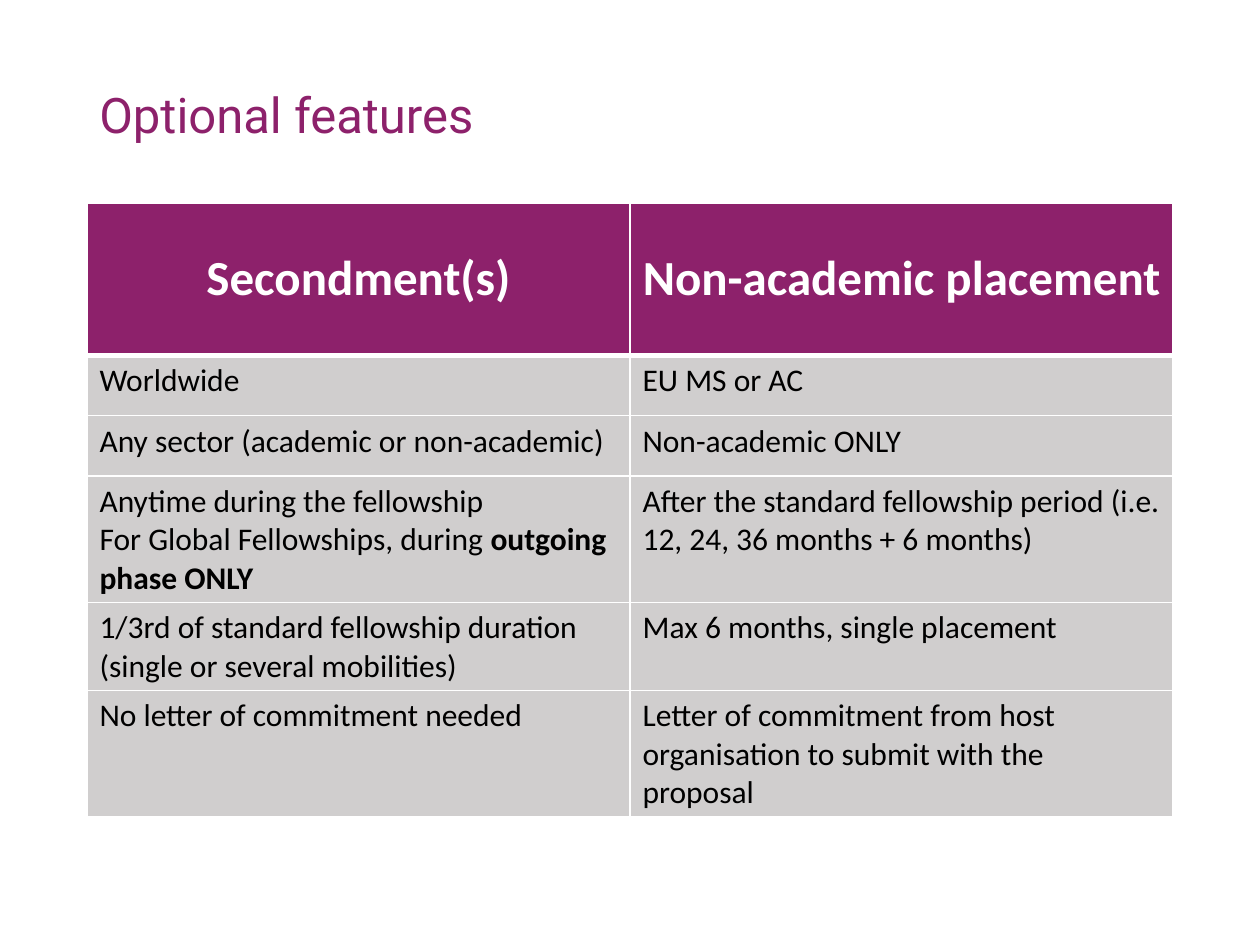
from lxml import etree
from pptx import Presentation
from pptx.dml.color import RGBColor
from pptx.enum.text import MSO_ANCHOR, PP_ALIGN
from pptx.oxml.ns import qn
from pptx.util import Inches, Pt

MIDDLE, TOP = MSO_ANCHOR.MIDDLE, MSO_ANCHOR.TOP
CENTER, LEFT = PP_ALIGN.CENTER, PP_ALIGN.LEFT

PLUM = RGBColor(0x8D, 0x21, 0x6B)
GREY = RGBColor(0xD0, 0xCE, 0xCE)
WHITE = RGBColor(0xFF, 0xFF, 0xFF)
BLACK = RGBColor(0x00, 0x00, 0x00)

ROW_HEIGHTS = [1.21, 0.48, 0.48, 0.99, 0.65, 0.65]

# Each cell is a list of paragraphs, each paragraph a list of (text, bold) runs
HEADER = [[[("Secondment(s)", True)]], [[("Non-academic placement", True)]]]
BODY = [
    [[[("Worldwide", False)]], [[("EU MS or AC", False)]]],
    [[[("Any sector (academic or non-academic)", False)]],
     [[("Non-academic ONLY", False)]]],
    [[[("Anytime during the fellowship", False)],
      [("For Global Fellowships, during ", False), ("outgoing phase ONLY", True)]],
     [[("After the standard fellowship period (i.e. 12, 24, 36 months + 6 months)", False)]]],
    [[[("1/3rd of standard fellowship duration (single or several mobilities)", False)]],
     [[("Max 6 months, single placement", False)]]],
    [[[("No letter of commitment needed", False)]],
     [[("Letter of commitment from host organisation to submit with the proposal", False)]]],
]


def add_span(para, text, font, size, color, bold=False):
    span = para.add_run()
    span.text = text
    span.font.name = font
    span.font.size = Pt(size)
    span.font.bold = bold
    span.font.color.rgb = color


def set_borders(cell, bottom=1, top=1):
    """White cell borders; widths in points."""
    properties = cell._tc.get_or_add_tcPr()
    sides = [("a:lnL", 1), ("a:lnR", 1), ("a:lnT", top), ("a:lnB", bottom)]
    for index, (tag, width) in enumerate(sides):
        line = etree.Element(qn(tag), w=str(Pt(width)))
        fill = etree.SubElement(line, qn("a:solidFill"))
        etree.SubElement(fill, qn("a:srgbClr"), val=str(WHITE))
        properties.insert(index, line)


def fill_cell(cell, paragraphs, size, color, fill, align, anchor):
    cell.fill.solid()
    cell.fill.fore_color.rgb = fill
    cell.vertical_anchor = anchor
    frame = cell.text_frame
    for index, spans in enumerate(paragraphs):
        para = frame.add_paragraph() if index else frame.paragraphs[0]
        para.alignment = align
        for text, bold in spans:
            add_span(para, text, "Calibri", size, color, bold)


def add_title(page, left, top, width, height):
    box = page.shapes.add_textbox(left, top, width, height)
    frame = box.text_frame
    frame.word_wrap = True
    frame.vertical_anchor = MIDDLE
    para = frame.paragraphs[0]
    para.line_spacing = 0.9
    add_span(para, "Optional features", "Roboto", 28, PLUM)


def add_comparison(page, left, top, width, height):
    columns = len(HEADER)
    table = page.shapes.add_table(len(ROW_HEIGHTS), columns, left, top, width, height).table
    for column in table.columns:
        column.width = width // columns
    for row, row_height in zip(table.rows, ROW_HEIGHTS):
        row.height = Inches(row_height)

    # Header row, with a heavier rule below
    for column, paragraphs in enumerate(HEADER):
        cell = table.cell(0, column)
        fill_cell(cell, paragraphs, 28, WHITE, PLUM, CENTER, MIDDLE)
        set_borders(cell, bottom=3)

    # Body rows
    for row, cells in enumerate(BODY, start=1):
        for column, paragraphs in enumerate(cells):
            cell = table.cell(row, column)
            fill_cell(cell, paragraphs, 18, BLACK, GREY, LEFT, TOP)
            set_borders(cell, top=3 if row == 1 else 1)


def main():
    deck = Presentation()
    deck.slide_width, deck.slide_height = Inches(10), Inches(7.5)
    page = deck.slides.add_slide(deck.slide_layouts[6])
    left, width = Inches(0.69), Inches(8.62)
    add_title(page, left, Inches(0.4), width, Inches(1.06))
    add_comparison(page, left, Inches(1.61), width, Inches(4.87))
    deck.save("out.pptx")


if __name__ == "__main__":
    main()
